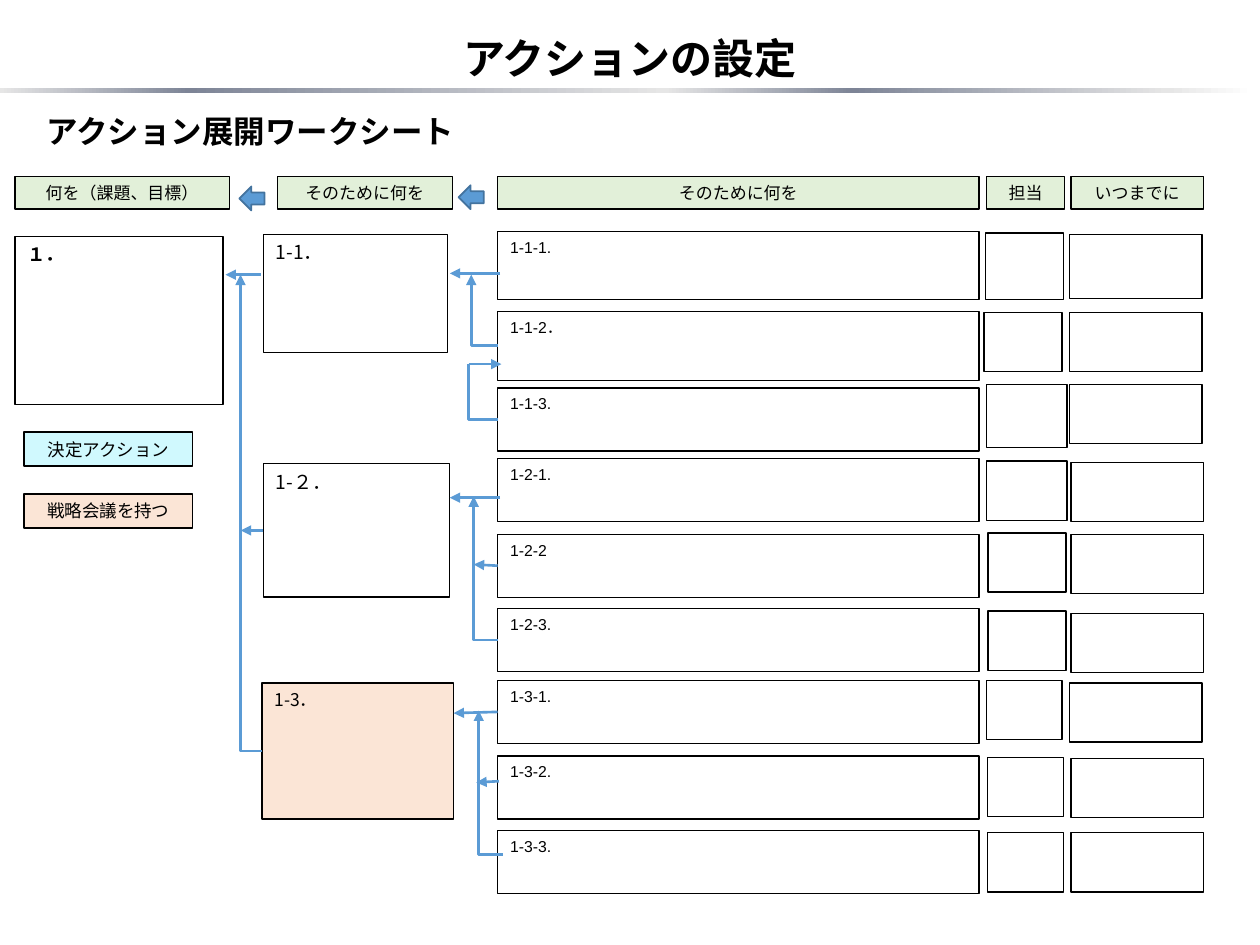
from lxml.etree import SubElement
from pptx import Presentation
from pptx.dml.color import RGBColor
from pptx.enum.shapes import MSO_CONNECTOR as LINK, MSO_SHAPE as SHAPE
from pptx.enum.text import MSO_ANCHOR as ANCHOR, PP_ALIGN as ALIGN
from pptx.oxml.ns import qn
from pptx.util import Inches, Pt

JP = "Noto Sans CJK JP"
BLACK, BLUE, BLUE_EDGE = "000000", "5B9BD5", "43739E"
GREEN, PEACH, CYAN = "E2F0D9", "FBE5D6", "D0F9FE"
HEADING = {"size": Pt(9.7), "name": JP}
LEGEND = {"size": Pt(10), "name": "Calibri"}
DETAIL = {"size": Pt(9), "name": "Arial"}
BAND_STOPS = [(0, "FFFFFF"), (7, "E6E6E6"), (32, "7D8496"),
              (47, "E6E6E6"), (85, "7D8496"), (100, "E6E6E6")]


def color(value):
    return RGBColor.from_string(value)


def inches(values):
    return [Inches(value) for value in values]


def write(frame, text, look, align=ALIGN.LEFT, anchor=ANCHOR.TOP):
    for key, value in {"word_wrap": True, "vertical_anchor": anchor}.items():
        setattr(frame, key, value)
    paragraph = frame.paragraphs[0]
    paragraph.alignment = align
    run = paragraph.add_run()
    run.text = text
    for key, value in look.items():
        setattr(run.font, key, value)
    run.font.color.rgb = color(BLACK)
    run.font._element.get_or_change_to_solidFill()
    east_asian = SubElement(run.font._element, qn("a:ea"))
    east_asian.set("typeface", JP)


def panel(slide, box, fill=None, edge=BLACK, width=0.75, kind=SHAPE.RECTANGLE):
    shape = slide.shapes.add_shape(kind, *inches(box))
    shape.shadow.inherit = False
    if fill:
        shape.fill.solid()
        shape.fill.fore_color.rgb = color(fill)
    else:
        shape.fill.background()
    shape.line.color.rgb = color(edge)
    shape.line.width = Pt(width)
    return shape


def label(slide, box, text, fill, look):
    write(panel(slide, box, fill).text_frame, text, look, ALIGN.CENTER, ANCHOR.MIDDLE)


def item(slide, box, text, look, fill=None):
    shape = panel(slide, box, fill)
    write(shape.text_frame, text, look)
    return shape


def link(slide, start, end, source=None, bent=False, arrow=True):
    kind = LINK.ELBOW if bent else LINK.STRAIGHT
    connector = slide.shapes.add_connector(kind, *inches(start + end))
    if source is not None:
        connector.begin_connect(source, 1)
    properties = connector._element.spPr
    if bent:
        properties.find(qn("a:prstGeom")).set("prst", "bentConnector2")
    connector.line.color.rgb = color(BLUE)
    connector.line.width = Pt(1.5)
    if arrow:
        SubElement(connector.line._get_or_add_ln(), qn("a:tailEnd")).set("type", "triangle")
    SubElement(properties, qn("a:effectLst"))


def heading_text(slide, box, text, size, align):
    frame = slide.shapes.add_textbox(*inches(box)).text_frame
    write(frame, text, {"size": Pt(size), "name": JP, "bold": True}, align, ANCHOR.MIDDLE)


def title_band(slide, box):
    band = panel(slide, box)
    band.line.fill.background()
    band.fill.gradient()
    band.fill.gradient_angle = 180
    stops = band._element.spPr.find(qn("a:gradFill")).find(qn("a:gsLst"))
    for old_stop in list(stops):
        stops.remove(old_stop)
    for position, value in BAND_STOPS:
        stop = SubElement(stops, qn("a:gs"))
        stop.set("pos", str(position * 1000))
        SubElement(stop, qn("a:srgbClr")).set("val", value)


def header_row(slide, top, height):
    for left, width, text in [
        (0.12, 1.7, "何を（課題、目標）"), (2.2, 1.39, "そのために何を"),
        (3.95, 3.82, "そのために何を"), (7.83, 0.62, "担当"), (8.5, 1.05, "いつまでに"),
    ]:
        label(slide, (left, top, width, height), text, GREEN, HEADING)
    for left, offset in [(1.9, 0.08), (3.64, 0.07)]:
        panel(slide, (left, top + offset, 0.2, 0.19), BLUE, BLUE_EDGE, 1, SHAPE.LEFT_ARROW)


def legend(slide, left, top, width, height):
    for index, (text, fill) in enumerate([("決定アクション", CYAN), ("戦略会議を持つ", PEACH)]):
        label(slide, (left, top + index * 0.49, width, height), text, fill, LEGEND)


def goals(slide):
    item(slide, (0.12, 1.88, 1.65, 1.33), "１．", {"size": Pt(10.5), "name": JP, "bold": True})
    return [
        item(slide, box, text, {"size": Pt(size), "name": JP}, fill)
        for box, text, size, fill in [
            ((2.09, 1.86, 1.46, 0.94), "1-1．", 11, None),
            ((2.09, 3.68, 1.48, 1.06), "1-２．", 11, None),
            ((2.08, 5.42, 1.52, 1.08), "1-3．", 10, PEACH),
        ]
    ]


def details(slide, left, width):
    rows = [
        ("1-1-1.", 1.84, 0.54), ("1-1-2．", 2.47, 0.55), ("1-1-3.", 3.08, 0.5),
        ("1-2-1.", 3.64, 0.5), ("1-2-2", 4.24, 0.5), ("1-2-3.", 4.83, 0.5),
        ("1-3-1.", 5.4, 0.5), ("1-3-2.", 6, 0.5), ("1-3-3.", 6.59, 0.5),
    ]
    return [item(slide, (left, top, width, height), text, DETAIL) for text, top, height in rows]


def owner_column(slide):
    for box in [
        (7.82, 1.85, 0.62, 0.53), (7.81, 2.48, 0.62, 0.47), (7.83, 3.05, 0.64, 0.5),
        (7.83, 3.66, 0.64, 0.47), (7.84, 4.23, 0.62, 0.47), (7.84, 4.85, 0.62, 0.47),
        (7.83, 5.4, 0.6, 0.47), (7.84, 6.01, 0.6, 0.47), (7.84, 6.61, 0.6, 0.47),
    ]:
        panel(slide, box)


def due_column(slide, width):
    for left, top, height in [
        (8.49, 1.86, 0.51), (8.49, 2.48, 0.47), (8.49, 3.05, 0.47),
        (8.5, 3.67, 0.47), (8.5, 4.24, 0.47), (8.5, 4.87, 0.47),
        (8.49, 5.42, 0.47), (8.5, 6.02, 0.47), (8.5, 6.61, 0.47),
    ]:
        panel(slide, (left, top, width, height))


def links(slide, goal_boxes, detail_boxes):
    for start, end, source in [
        ((2.07, 2.18), (1.79, 2.18), None),
        ((2.09, 4.21), (1.91, 4.21), goal_boxes[1]),
        ((3.97, 2.17), (3.57, 2.17), None),
        ((3.72, 2.89), (3.98, 2.89), None),
        ((3.97, 3.95), (3.57, 3.95), None),
        ((3.95, 4.47), (3.76, 4.48), detail_boxes[4]),
        ((3.95, 5.65), (3.6, 5.66), detail_boxes[6]),
        ((3.96, 6.2), (3.78, 6.21), None),
    ]:
        link(slide, start, end, source)
    for start, end, source, arrow in [
        ((2.09, 5.96), (1.91, 2.18), goal_boxes[2], True),
        ((3.95, 2.75), (3.74, 2.18), detail_boxes[1], True),
        ((3.95, 3.33), (3.72, 2.89), detail_boxes[2], False),
        ((3.95, 5.08), (3.76, 3.94), detail_boxes[5], True),
        ((3.99, 6.78), (3.8, 5.64), None, True),
    ]:
        link(slide, start, end, source, bent=True, arrow=arrow)


def main():
    deck = Presentation()
    deck.slide_width, deck.slide_height = inches((10, 7.5))
    slide = deck.slides.add_slide(deck.slide_layouts[6])
    heading_text(slide, (0, 0.21, 10, 0.5), "アクションの設定", 24, ALIGN.CENTER)
    title_band(slide, (0, 0.7, 9.96, 0.04))
    heading_text(slide, (0.27, 0.84, 9.45, 0.4), "アクション展開ワークシート", 18, ALIGN.LEFT)
    header_row(slide, 1.4, 0.26)
    goal_boxes = goals(slide)
    legend(slide, 0.19, 3.43, 1.34, 0.27)
    detail_boxes = details(slide, 3.95, 3.82)
    owner_column(slide)
    due_column(slide, 1.05)
    links(slide, goal_boxes, detail_boxes)
    deck.save("out.pptx")


if __name__ == "__main__":
    main()
